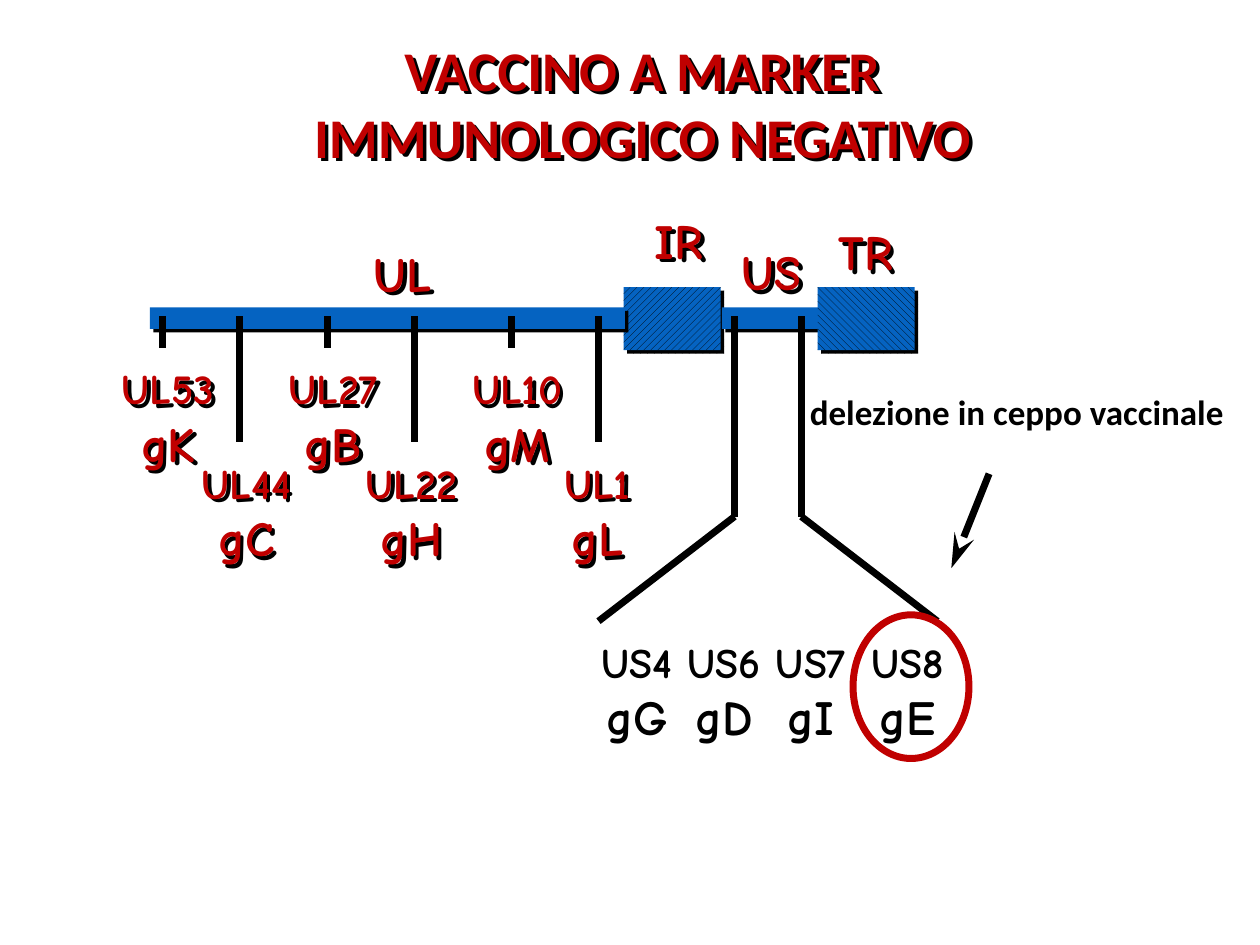
from pptx import Presentation
from pptx.dml.color import RGBColor
from pptx.enum.dml import MSO_PATTERN as Pat
from pptx.enum.shapes import MSO_CONNECTOR as Conn, MSO_SHAPE as Geo
from pptx.enum.text import MSO_AUTO_SIZE as Fit, PP_ALIGN as Align
from pptx.oxml.ns import qn
from pptx.util import Inches, Pt
from lxml.etree import SubElement as Sub

RED = RGBColor(0xC0, 0x00, 0x00)
BLUE = RGBColor(0x05, 0x63, 0xC1)
BLACK = RGBColor(0x00, 0x00, 0x00)
HAND = "Comic Neue"
SANS = "Calibri"


def cast(shape):
    shape.shadow.inherit = False
    effects = shape._element.spPr.find(qn("a:effectLst"))
    drop = Sub(effects, qn("a:outerShdw"), dist=str(Pt(2.8)), dir="2700000", algn="ctr", rotWithShape="0")
    Sub(drop, qn("a:srgbClr"), val=str(BLACK))


def write(slide, box, text, sizes=(28, 28), font=HAND, color=RED, align=Align.CENTER, lead=None, before=None):
    label = slide.shapes.add_textbox(*map(Inches, box))
    if color == RED:
        cast(label)
    frame = label.text_frame
    frame.word_wrap = False
    frame.auto_size = Fit.SHAPE_TO_FIT_TEXT
    for i, (line, size) in enumerate(zip(text.split("\n"), sizes)):
        para = frame.paragraphs[0] if i == 0 else frame.add_paragraph()
        para.alignment = align
        para.line_spacing = lead
        para.space_before = before
        run = para.add_run()
        run.text = line
        run.font.size = Pt(size)
        run.font.bold = True
        run.font.color.rgb = color
        run.font.name = font


def draw(slide, start, end, arrow=False):
    line = slide.shapes.add_connector(Conn.STRAIGHT, *map(Inches, start + end))
    line.line.color.rgb = BLACK
    line.line.width = Pt(4)
    if arrow:
        Sub(line.line._get_or_add_ln(), qn("a:tailEnd"), type="stealth", w="med", len="lg")
    Sub(line._element.spPr, qn("a:effectLst"))


def add_bar(slide, box, pattern=None):
    bar = slide.shapes.add_shape(Geo.RECTANGLE, *map(Inches, box))
    if pattern:
        bar.fill.patterned()
        bar.fill.pattern = pattern
        bar.fill.fore_color.rgb = BLACK
        bar.fill.back_color.rgb = BLUE
    else:
        bar.fill.solid()
        bar.fill.fore_color.rgb = BLUE
    bar.line.fill.background()
    cast(bar)


def add_genome(slide, left, top):
    add_bar(slide, (left + 3.76, top, 0.77, 0.5), Pat.WIDE_UPWARD_DIAGONAL)
    add_bar(slide, (left + 4.54, top + 0.16, 0.77, 0.17))
    add_bar(slide, (left + 5.3, top, 0.77, 0.5), Pat.WIDE_DOWNWARD_DIAGONAL)
    add_bar(slide, (left, top + 0.16, 3.77, 0.17))
    for name, x, y, wide in (("UL", 1.68, -0.4, 0.7), ("US", 4.6, -0.41, 0.76),
                             ("IR", 3.91, -0.66, 0.66), ("TR", 5.37, -0.57, 0.72)):
        write(slide, (left + x, top + y, wide, 0.57), name, align=Align.LEFT)


def add_long(slide, top):
    genes = (("UL53\ngK", 0.81, 1.05, 1.29), ("UL44\ngC", 1.43, 1.05, 1.9),
             ("UL27\ngB", 2.12, 1.05, 2.6), ("UL22\ngH", 2.74, 1.05, 3.29),
             ("UL10\ngM", 3.58, 1.05, 4.06), ("UL1\ngL", 4.32, 0.84, 4.75))
    for i, (text, left, wide, tick) in enumerate(genes):
        low = i % 2
        write(slide, (left, top + 0.32 + 0.75 * low, wide, 0.98), text, (24, 28))
        draw(slide, (tick, top), (tick, top + 0.25 + 0.75 * low))


def add_short(slide, left, top):
    for text, x in (("US4\ngG", 0), ("US6\ngD", 0.69), ("US7\ngI", 1.38), ("US8\ngE", 2.15)):
        write(slide, (left + x, top, 0.89, 0.98), text, (24, 28), color=BLACK)
    for near, far in ((1.22, 0.14), (1.75, 2.83)):
        bend = (left + near, top - 0.9)
        draw(slide, (left + near, top - 2.49), bend)
        draw(slide, bend, (left + far, top - 0.07))
    ring = slide.shapes.add_shape(Geo.OVAL, *map(Inches, (left + 2.16, top - 0.12, 0.92, 1.14)))
    ring.fill.background()
    ring.line.color.rgb = RED
    ring.line.width = Pt(4)
    ring.shadow.inherit = False


def add_note(slide, left, top):
    draw(slide, (left + 1.54, top + 0.67), (left + 1.24, top + 1.42), arrow=True)
    write(slide, (left, top, 3.52, 0.4), "delezione in ceppo vaccinale", (20,),
          font=SANS, color=BLACK, lead=0.9, before=Pt(6))


def main():
    deck = Presentation()
    deck.slide_width, deck.slide_height = Inches(10), Inches(7.5)
    slide = deck.slides.add_slide(deck.slide_layouts[6])
    add_genome(slide, 1.19, 2.28)
    add_long(slide, 2.51)
    add_short(slide, 4.61, 5)
    add_note(slide, 6.31, 3.09)
    write(slide, (2.37, 0.23, 5.46, 1.18), "VACCINO A MARKER\nIMMUNOLOGICO NEGATIVO", (32, 32), font=SANS)
    deck.save("out.pptx")


if __name__ == "__main__":
    main()
